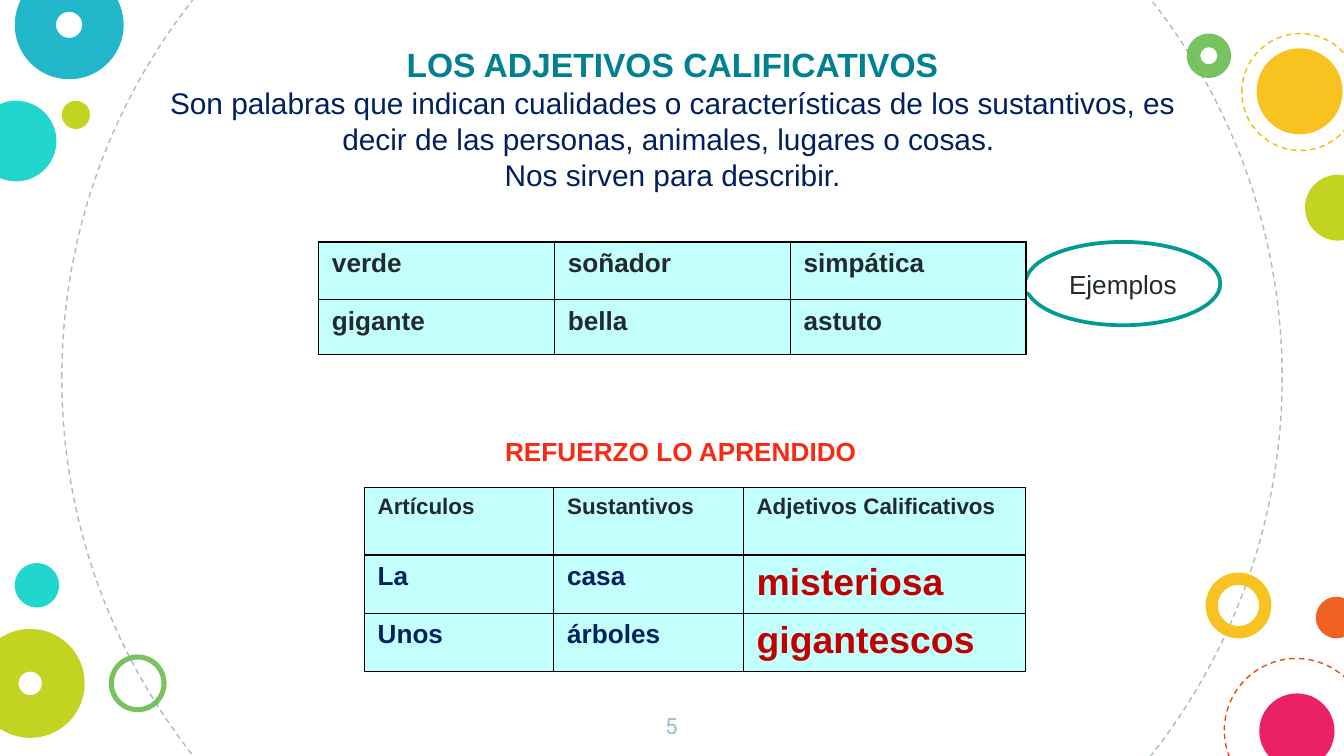
from dataclasses import dataclass
from typing import Optional

from lxml import etree
from pptx import Presentation
from pptx import util as u
from pptx.dml.color import RGBColor
from pptx.enum import dml, shapes, text
from pptx.oxml.ns import qn

CELL = u.Inches(0.1)  # the slide is a grid of 100 columns by 56.25 rows
COLS, ROWS = 100, 56.25


@dataclass(frozen=True)
class Theme:
    font: str = "Arial"
    foot_font: str = "Roboto"
    white: str = "FFFFFF"
    black: str = "000000"
    ink: str = "212A2E"
    navy: str = "002060"
    teal: str = "008192"
    edge: str = "009B92"
    mint: str = "C3FFFC"
    red: str = "F92913"
    wine: str = "C00000"
    gray: str = "A1BECC"
    aqua: str = "00D1C6"
    blue: str = "00ACC3"
    lime: str = "BBCD00"
    green: str = "65BB48"
    gold: str = "F8BB00"
    rust: str = "ED4A00"
    pink: str = "E8004C"
    alpha: int = 87
    thin: float = 0.75
    thick: float = 2
    small: int = 12
    base: int = 14
    lead: int = 16
    head: int = 18
    large: int = 20


T = Theme()


@dataclass(frozen=True)
class Box:
    x: float
    y: float
    w: float
    h: float


@dataclass(frozen=True)
class Disc:
    """A circle; rim is the ring's share of its width."""
    x: float
    y: float
    size: float
    color: str
    rim: Optional[float] = None
    dashed: bool = False


@dataclass(frozen=True)
class Style:
    size: int
    color: str
    bold: bool = False
    font: str = T.font


WORD = Style(T.base, T.ink, True)
LABEL = Style(T.small, T.ink, True)
NOUN = Style(T.base, T.navy, True)
ANSWER = Style(T.large, T.wine, True)
LEAD = Style(T.lead, T.navy)

DISCS = [
    Disc(4.6, -17.3, 90.8, T.gray, dashed=True),
    Disc(-1.8, 7.5, 6, T.aqua),
    Disc(89.7, 42.6, 4.9, T.gold, 0.186),
    Disc(1.1, -2.2, 8.1, T.blue, 0.379),
    Disc(4.6, 7.5, 2.1, T.lime),
    Disc(91.1, 49, 10.7, T.rust, dashed=True),
    Disc(8.1, 48.7, 4.3, T.green, 0.088),
    Disc(97.9, 44.4, 3.1, T.rust),
    Disc(-1.8, 46.8, 8.1, T.lime, 0.392),
    Disc(93.7, 51.6, 5.6, T.pink),
    Disc(88.3, 2.5, 3.3, T.green, 0.306),
    Disc(93.5, 3.6, 6.4, T.gold),
    Disc(97.1, 13, 4.9, T.lime),
    Disc(92.4, 2.5, 8.7, T.gold, dashed=True),
    Disc(1.1, 41.9, 3.3, T.aqua),
]


def grid(n: float) -> int:
    return round(n * CELL)


def place(box: Box) -> tuple:
    return grid(box.x), grid(box.y), grid(box.w), grid(box.h)


def rgb(color: str) -> RGBColor:
    return RGBColor.from_string(color)


def format_text(para, style: Style, align=None) -> None:
    para.alignment = align
    for run in para.runs:
        font = run.font
        font.name, font.size, font.bold = style.font, u.Pt(style.size), style.bold
        font.color.rgb = rgb(style.color)


def add_disc(slide, disc: Disc) -> None:
    kind = shapes.MSO_SHAPE.DONUT if disc.rim else shapes.MSO_SHAPE.OVAL
    shape = slide.shapes.add_shape(
        kind, *place(Box(disc.x, disc.y, disc.size, disc.size)))
    shape.shadow.inherit = False
    if disc.rim:
        shape.adjustments[0] = disc.rim
    if disc.dashed:
        shape.fill.background()
        shape.line.color.rgb = rgb(disc.color)
        shape.line.width = u.Pt(T.thin)
        shape.line.dash_style = dml.MSO_LINE.DASH
        return
    shape.line.fill.background()
    shape.fill.solid()
    shape.fill.fore_color.rgb = rgb(disc.color)
    tone = shape._element.spPr.find(".//" + qn("a:srgbClr"))
    etree.SubElement(tone, qn("a:alpha"), val=str(T.alpha * 1000))


def add_callout(slide, box: Box, words: str) -> None:
    shape = slide.shapes.add_shape(shapes.MSO_SHAPE.OVAL_CALLOUT, *place(box))
    shape.shadow.inherit = False
    shape.adjustments[0], shape.adjustments[1] = -0.562, 0.04
    shape.fill.solid()
    shape.fill.fore_color.rgb = rgb(T.white)
    shape.line.color.rgb = rgb(T.edge)
    shape.line.width = u.Pt(T.thick)
    frame = shape.text_frame
    frame.text = words
    frame.vertical_anchor = text.MSO_ANCHOR.MIDDLE
    format_text(frame.paragraphs[0], Style(T.base, T.ink), text.PP_ALIGN.CENTER)


def add_text(slide, box: Box, words: str, style: Style, align=None):
    frame = slide.shapes.add_textbox(*place(box)).text_frame
    frame.word_wrap = True
    frame.text = words
    format_text(frame.paragraphs[0], style, align)
    return frame


def add_border(cell) -> None:
    props = cell._tc.get_or_add_tcPr()
    for side in "LRTB":
        line = etree.SubElement(props, qn("a:ln" + side), w=str(u.Pt(T.thin)))
        fill = etree.SubElement(line, qn("a:solidFill"))
        etree.SubElement(fill, qn("a:srgbClr"), val=T.black)


def add_table(slide, x: float, y: float, widths: list, heights: list,
              words: list, styles: list) -> None:
    box = Box(x, y, sum(widths), sum(heights))
    table = slide.shapes.add_table(len(heights), len(widths), *place(box)).table
    table.first_row = table.horz_banding = False
    for col, width in zip(table.columns, widths):
        col.width = grid(width)
    for r, (row, height) in enumerate(zip(table.rows, heights)):
        row.height = grid(height)
        for cell, word, style in zip(row.cells, words[r], styles[r]):
            add_border(cell)
            cell.fill.solid()
            cell.fill.fore_color.rgb = rgb(T.mint)
            cell.text_frame.text = word
            format_text(cell.text_frame.paragraphs[0], style)


def set_title(title, box: Box, lines: list, styles: list) -> None:
    title.left, title.top, title.width, title.height = place(box)
    frame = title.text_frame
    frame.text = "\n".join(lines)
    frame.vertical_anchor = text.MSO_ANCHOR.TOP
    frame.auto_size = text.MSO_AUTO_SIZE.NONE
    for para, style in zip(frame.paragraphs, styles):
        format_text(para, style, text.PP_ALIGN.CENTER)


def main() -> None:
    deck = Presentation()
    deck.slide_width, deck.slide_height = grid(COLS), grid(ROWS)
    slide = deck.slides.add_slide(deck.slide_layouts[5])
    for disc in DISCS:
        add_disc(slide, disc)
    set_title(slide.shapes.title, Box(9.3, 2.8, 81.5, 12.1), [
        "LOS ADJETIVOS CALIFICATIVOS",
        "Son palabras que indican cualidades o características de los "
        "sustantivos, es decir de las personas, animales, lugares o cosas. ",
        "Nos sirven para describir.",
    ], [Style(T.head, T.teal, True), LEAD, LEAD])
    add_callout(slide, Box(76.3, 18, 14.5, 6.2), "Ejemplos")
    add_table(slide, 23.7, 18, [17.55] * 3, [4.3, 4.1],
              [["verde", "soñador", "simpática"], ["gigante", "bella", "astuto"]],
              [[WORD] * 3] * 2)
    add_text(slide, Box(36.6, 31.9, 31.9, 3.4), "REFUERZO LO APRENDIDO",
             Style(T.base, T.red, True))
    add_table(slide, 27.1, 36.3, [14.1, 14.1, 21], [5, 4.3, 4.3],
              [["Artículos", "Sustantivos", "Adjetivos Calificativos"],
               ["La", "casa", "misteriosa"],
               ["Unos", "árboles", "gigantescos"]],
              [[LABEL] * 3] + [[NOUN, NOUN, ANSWER]] * 2)
    foot = add_text(slide, Box(47.4, 52, 5.1, 4.3), "5",
                    Style(T.small, T.gray, font=T.foot_font), text.PP_ALIGN.CENTER)
    foot.margin_left = foot.margin_right = foot.margin_top = foot.margin_bottom = CELL
    deck.save("out.pptx")


if __name__ == "__main__":
    main()
